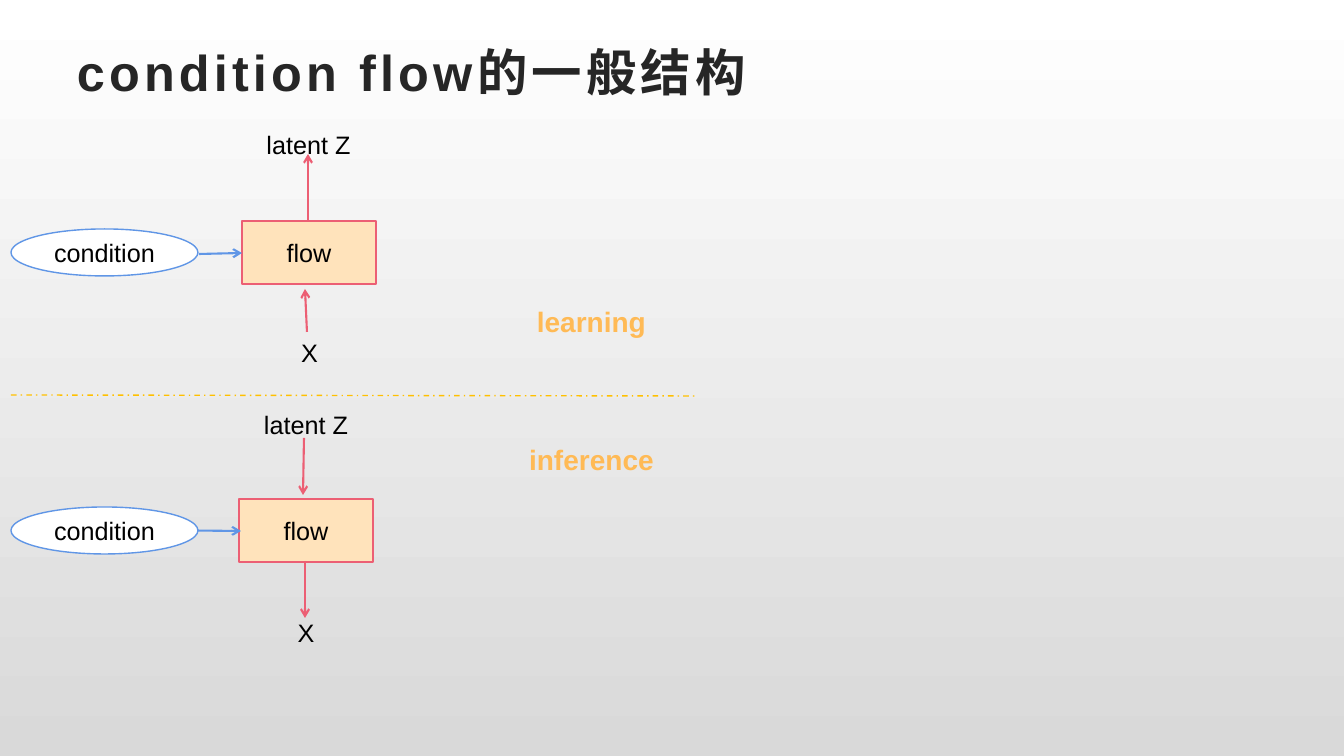
"""Build the slide on the general structure of a condition flow."""
import pptx
import pptx.dml.color
import pptx.enum.dml
import pptx.enum.shapes
import pptx.enum.text
import pptx.oxml
import pptx.oxml.ns
import pptx.util

RGB = pptx.dml.color.RGBColor
WHITE = RGB(0xFF, 0xFF, 0xFF)
GRAY = RGB(0xD9, 0xD9, 0xD9)
BLACK = RGB(0, 0, 0)
INK = RGB(0x26, 0x26, 0x26)
CREAM = RGB(0xFF, 0xE3, 0xBB)
ROSE = RGB(0xEC, 0x5F, 0x74)
BLUE = RGB(0x60, 0x96, 0xE6)
AMBER = RGB(0xFF, 0xBA, 0x55)
GOLD = RGB(0xFF, 0xC0, 0x00)

SHAPE = pptx.enum.shapes.MSO_SHAPE
ALIGN = pptx.enum.text.PP_ALIGN
FRAME = {"word_wrap": True, "margin_left": 0, "margin_right": 0}
MIDDLE = pptx.enum.text.MSO_ANCHOR.MIDDLE


def px(*lengths):
    """Turn whole pixels into EMU."""
    return [pptx.util.Emu(round(n * 914400 / 100.8)) for n in lengths]


def apply(target, values):
    """Set each named attribute on the target."""
    for name, value in values.items():
        setattr(target, name, value)


def write(frame, text, size=18, color=BLACK, bold=False, align=ALIGN.CENTER):
    """Put one formatted run in a text frame."""
    apply(frame, FRAME)
    line = frame.paragraphs[0]
    line.alignment = align
    run = line.add_run()
    run.text = text
    apply(run.font, {"name": "Arial", "size": pptx.util.Pt(size), "bold": bold})
    run.font.color.rgb = color
    return run


def add_label(slide, box, text, **style):
    """Add a text box and return its run."""
    frame = slide.shapes.add_textbox(*px(*box)).text_frame
    return write(frame, text, **style)


def add_node(slide, kind, box, text, fill, edge):
    """Add a filled shape with centred text."""
    node = slide.shapes.add_shape(kind, *px(*box))
    node.shadow.inherit = False
    node.fill.solid()
    node.fill.fore_color.rgb = fill
    node.line.color.rgb = edge
    node.line.width = pptx.util.Pt(1)
    write(node.text_frame, text)
    node.text_frame.vertical_anchor = MIDDLE


def add_line(slide, ends, color, width=1.5, dash=None, arrow=True):
    """Add a straight line, with an arrowhead at its end if asked."""
    kind = pptx.enum.shapes.MSO_CONNECTOR.STRAIGHT
    link = slide.shapes.add_connector(kind, *px(*ends))
    values = {"width": pptx.util.Pt(width), "dash_style": dash}
    apply(link.line, values)
    link.line.color.rgb = color
    if arrow:
        tail = pptx.oxml.parse_xml(
            "<a:tailEnd %s type='arrow'/>" % pptx.oxml.ns.nsdecls("a"))
        link.line._get_or_add_ln().append(tail)
    link._element.spPr.append(pptx.oxml.parse_xml(
        "<a:effectLst %s/>" % pptx.oxml.ns.nsdecls("a")))


def add_panel(slide, top, left, name, heading, link, flows, boxes):
    """Add one flow diagram with its heading."""
    add_node(slide, SHAPE.RECTANGLE, (left, top, 134, 63), "flow", CREAM, ROSE)
    add_line(slide, link, BLUE)
    add_node(slide, SHAPE.OVAL, (11, top + 8, 187, 47), "condition", WHITE, BLUE)
    for text, box in zip(("latent Z", "X"), boxes):
        add_label(slide, box, text)
    for ends in flows:
        add_line(slide, ends, ROSE)
    add_label(slide, (467, heading, 249, 44), name,
              size=20, color=AMBER, bold=True)


def paint(slide):
    """Fill the background from white down to gray."""
    fill = slide.background.fill
    fill.gradient()
    fill.gradient_angle = 270
    for stop, color in zip(fill.gradient_stops, (WHITE, GRAY)):
        stop.color.rgb = color


def main():
    """Build and save the slide."""
    deck = pptx.Presentation()
    deck.slide_width, deck.slide_height = px(1344, 756)
    slide = deck.slides.add_slide(deck.slide_layouts[6])
    paint(slide)
    title = add_label(slide, (77, 32, 1200, 78), "condition flow的一般结构",
                      size=36, color=INK, bold=True, align=ALIGN.LEFT)
    title.font._element.set("spc", "300")
    slide.shapes[0].text_frame.vertical_anchor = MIDDLE
    add_panel(slide, 221, 242, "learning", 300, (199, 254, 242, 253),
              ((308, 221, 308, 154), (307, 332, 305, 289)),
              ((233, 124, 151, 40), (261, 332, 97, 40)))
    add_panel(slide, 499, 239, "inference", 438, (147, 530, 241, 531),
              ((304, 438, 303, 495), (305, 561, 305, 618)),
              ((254, 404, 104, 40), (254, 612, 104, 40)))
    add_line(slide, (11, 395, 698, 396), GOLD, width=1,
             dash=pptx.enum.dml.MSO_LINE.DASH_DOT, arrow=False)
    deck.save("out.pptx")


if __name__ == "__main__":
    main()
